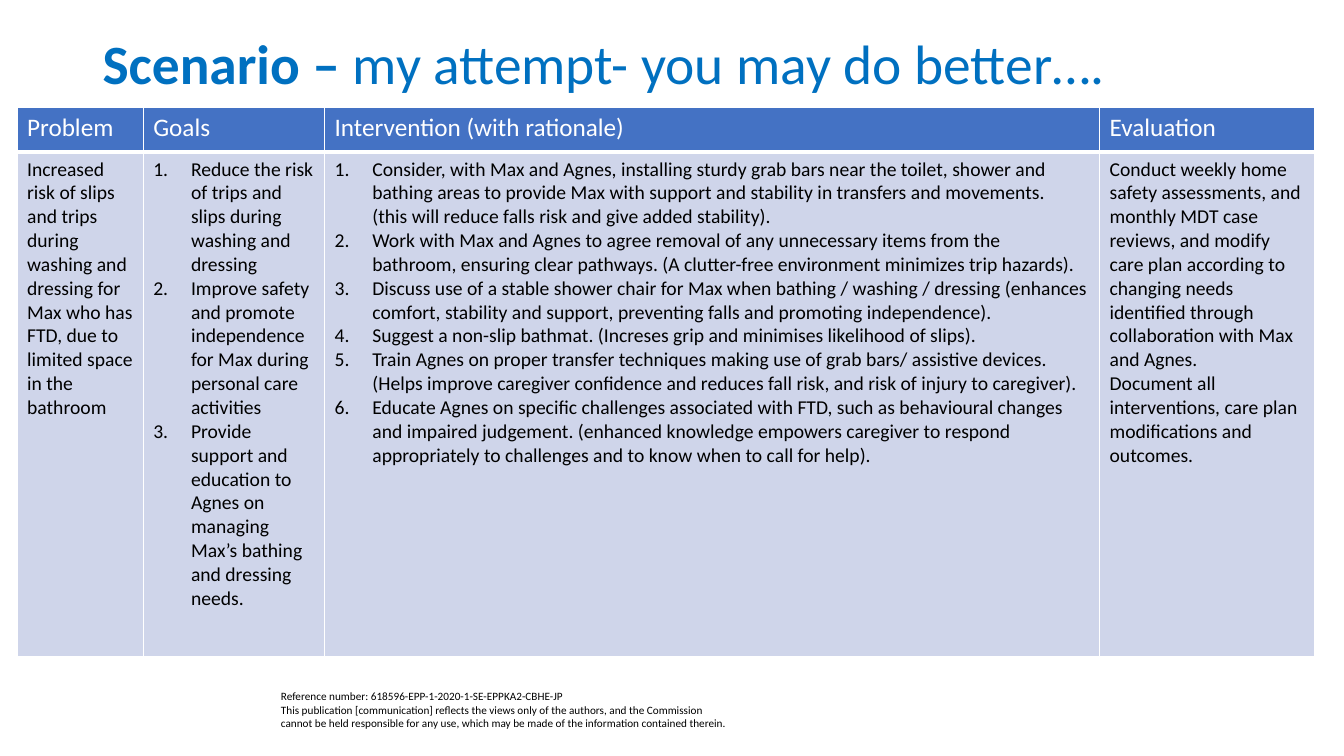
from lxml.etree import SubElement as Sub
from pptx import Presentation
from pptx.dml.color import RGBColor
from pptx.enum.text import MSO_ANCHOR as Anchor, MSO_AUTO_SIZE as Fit, PP_ALIGN as Align
from pptx.oxml import parse_xml
from pptx.oxml.ns import nsdecls, qn
from pptx.util import Cm, Pt

FONT = "Calibri"
WHITE, BLACK, BLUE, HEAD, BODY = "FFFFFF", "000000", "0070C0", "4472C4", "CFD5EA"
INDENT = Cm(0.95)

# Each column: width in cm, heading, numbered or not, entries
COLS = [
    (3.18, "Problem", False, [
        "Increased risk of slips and trips during washing and dressing for Max who has FTD, "
        "due to limited space in the bathroom"]),
    (4.57, "Goals", True, [
        "Reduce the risk of trips and slips during washing and dressing",
        "Improve safety and promote independence for Max during personal care activities",
        "Provide support and education to Agnes on managing Max’s bathing and dressing needs."]),
    (19.53, "Intervention (with rationale)", True, [
        "Consider, with Max and Agnes, installing sturdy grab bars near the toilet, shower and "
        "bathing areas to provide Max with support and stability in transfers and movements.  "
        "(this will reduce falls risk and give added stability).",
        "Work with Max and Agnes to agree removal of any unnecessary items from the bathroom, "
        "ensuring clear pathways. (A clutter-free environment minimizes trip hazards).",
        "Discuss use of a stable shower chair for Max when bathing / washing / dressing (enhances "
        "comfort, stability and support, preventing falls and promoting independence).",
        "Suggest a non-slip bathmat. (Increses grip and minimises likelihood of slips).",
        "Train Agnes on proper transfer techniques making use of grab bars/ assistive devices.  "
        "(Helps improve caregiver confidence and reduces fall risk, and risk of injury to "
        "caregiver).",
        "Educate Agnes on specific challenges associated with FTD, such as behavioural changes "
        "and impaired judgement. (enhanced knowledge empowers caregiver to respond "
        "appropriately to challenges and to know when to call for help)."]),
    (5.41, "Evaluation", False, [
        "Conduct weekly home safety assessments, and monthly MDT case reviews, and modify care "
        "plan according to changing needs identified through collaboration with Max and Agnes.",
        "Document all interventions, care plan modifications and outcomes."]),
]
NOTE = ("Reference number: 618596-EPP-1-2020-1-SE-EPPKA2-CBHE-JP\v"
        "This publication [communication] reflects the views only of the authors, and the "
        "Commission cannot be held responsible for any use, which may be made of the "
        "information contained therein.")


def paint(color, tint):
    color.rgb = RGBColor.from_string(tint)


def style(run, size, tint, bold=False):
    run.font.name, run.font.size, run.font.bold = FONT, Pt(size), bold
    paint(run.font.color, tint)


def number(para):
    props = para._p.get_or_add_pPr()
    props.set("marL", str(INDENT))
    props.set("indent", str(-INDENT))
    Sub(props, qn("a:buFont"), typeface="+mj-lt")
    Sub(props, qn("a:buAutoNum"), type="arabicPeriod")


def border(cell, low):
    props = cell._tc.get_or_add_tcPr()
    for i, side in enumerate("LRTB"):
        width = Pt(low if side == "B" else 1)
        props.insert(i, parse_xml(
            f'<a:ln{side} {nsdecls("a")} w="{width}"><a:solidFill>'
            f'<a:srgbClr val="{WHITE}"/></a:solidFill></a:ln{side}>'))


def fill_cell(cell, texts, size, tint, back, low=1, listed=False):
    cell.text_frame.text = "\n".join(texts)
    for para in cell.text_frame.paragraphs:
        if listed:
            number(para)
        for run in para.runs:
            style(run, size, tint)
    cell.fill.solid()
    paint(cell.fill.fore_color, back)
    border(cell, low)


def add_title(slide):
    title = slide.shapes.title
    title.left, title.top, title.width, title.height = Cm(2.33), Cm(1.02), Cm(29.21), Cm(1.3)
    frame = title.text_frame
    frame.auto_size, frame.vertical_anchor = Fit.NONE, Anchor.MIDDLE
    para = frame.paragraphs[0]
    para.alignment, para.line_spacing = Align.LEFT, 0.9
    for text, bold in (("Scenario – ", True), ("my attempt- you may do better….", False)):
        run = para.add_run()
        run.text = text
        style(run, 39.6, BLUE, bold)


def add_plan(slide):
    width = sum(col[0] for col in COLS)
    table = slide.shapes.add_table(2, len(COLS), Cm(0.43), Cm(2.7), Cm(width), Cm(13.84)).table
    table.rows[0].height, table.rows[1].height = Cm(1.14), Cm(12.7)
    for i, (wide, head, listed, texts) in enumerate(COLS):
        table.columns[i].width = Cm(wide)
        fill_cell(table.cell(0, i), [head], 18, WHITE, HEAD, low=3)
        fill_cell(table.cell(1, i), texts, 14, BLACK, BODY, listed=listed)


def add_note(slide):
    frame = slide.shapes.add_textbox(Cm(6.83), Cm(17.25), Cm(11.79), Cm(1.27)).text_frame
    frame.word_wrap = True
    frame.text = NOTE
    for run in frame.paragraphs[0].runs:
        style(run, 8, BLACK)


def main():
    deck = Presentation()
    deck.slide_width, deck.slide_height = Cm(33.87), Cm(19.05)
    slide = deck.slides.add_slide(deck.slide_layouts[5])
    add_note(slide)
    add_title(slide)
    add_plan(slide)
    deck.save("out.pptx")


if __name__ == "__main__":
    main()
